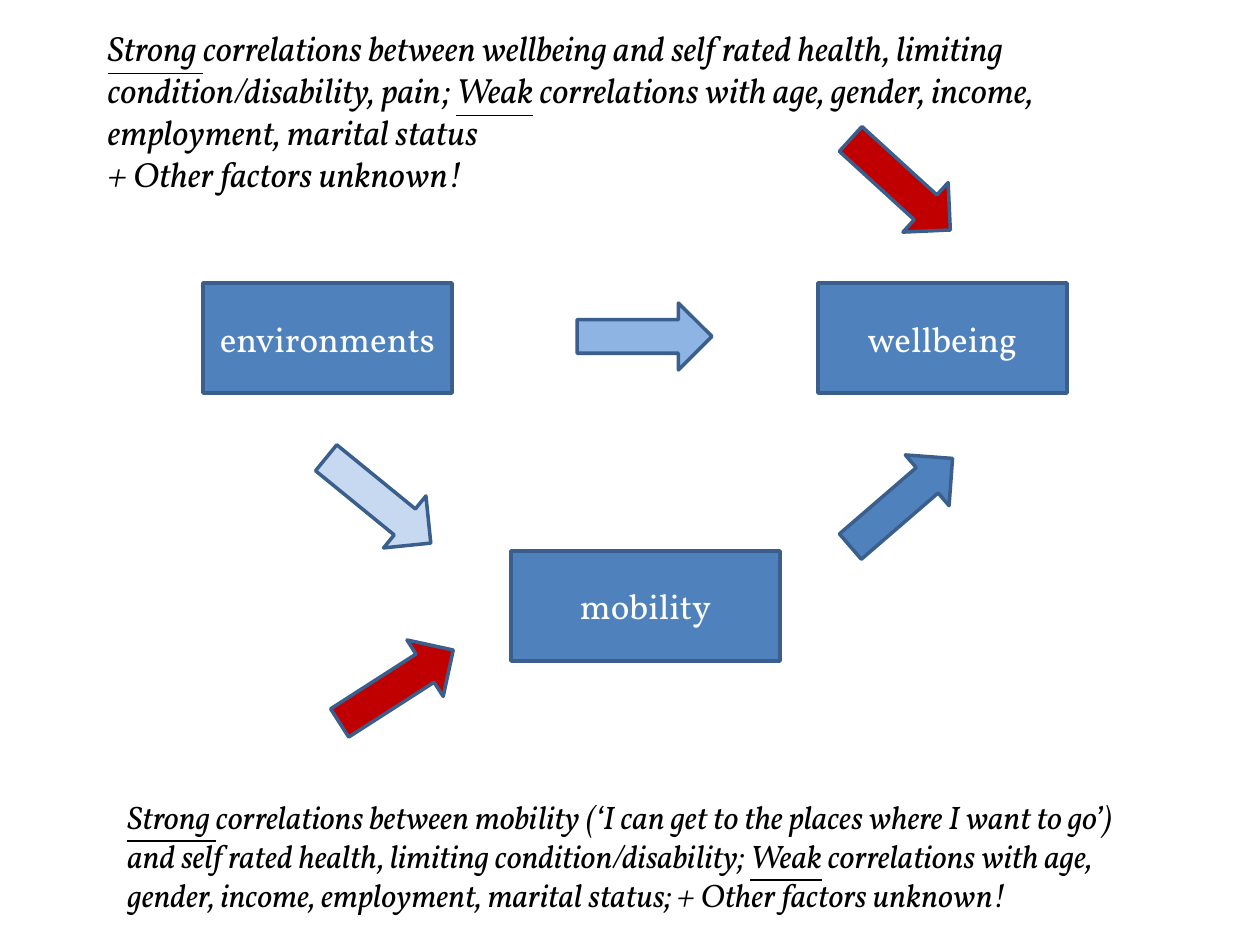
"""Build the slide on environments, mobility and wellbeing."""
from dataclasses import dataclass

import pptx
import pptx.dml.color
import pptx.enum.shapes
import pptx.enum.text
import pptx.util

SCALE = 914400 / 126
FONT = "Vollkorn"
EDGE = "3A5F8C"
BLUE = "4F81BD"
RED = "C00000"
KIND = pptx.enum.shapes.MSO_SHAPE
ALIGN = pptx.enum.text.PP_ALIGN
ANCHOR = pptx.enum.text.MSO_ANCHOR


@dataclass
class Box:
    """A labelled process box."""
    label: str
    left: int
    top: int
    width: int


@dataclass
class Arrow:
    """A block arrow turned by some degrees."""
    left: int
    top: int
    turn: float
    fill: str


@dataclass
class Span:
    """A stretch of note text."""
    text: str
    line: bool = False


BOXES = [
    Box("environments", 203, 283, 249),
    Box("wellbeing", 818, 283, 249),
    Box("mobility", 511, 551, 269),
]
ARROWS = [
    Arrow(577, 303, 0, "8EB4E3"),
    Arrow(311, 467, 39.2, "C6D9F1"),
    Arrow(834, 469, 319.2, BLUE),
    Arrow(833, 151, 42.4, RED),
    Arrow(329, 653, 327.3, RED),
]
UPPER = [
    Span("Strong ", True),
    Span("correlations between wellbeing and self rated health, "
         "limiting condition/disability, pain; "),
    Span("Weak", True),
    Span(" correlations with age, gender, income, employment, marital status "
         "\n+ Other factors unknown!"),
]
LOWER = [
    Span("Strong ", True),
    Span("correlations between mobility (‘I can get to the places where I want "
         "to go’) and self rated health, limiting condition/disability; "),
    Span("Weak", True),
    Span(" correlations with age, gender, income, employment, marital status; "
         "+ Other factors unknown!"),
]


def px(count: int) -> int:
    """Turn pixels into EMU."""
    return round(count * SCALE)


def tint(code: str) -> pptx.dml.color.RGBColor:
    """Turn a hex string into a colour."""
    return pptx.dml.color.RGBColor.from_string(code)


def put(item, **values) -> None:
    """Set attributes from format values."""
    for name, value in values.items():
        setattr(item, name, value)


def style(run, size: float, color: str, **values) -> None:
    """Format the font of a run."""
    put(run.font, name=FONT, size=pptx.util.Pt(size), **values)
    run.font.color.rgb = tint(color)


def paint(shape, fill: str) -> None:
    """Fill and outline a shape."""
    shape.shadow.inherit = False
    shape.fill.solid()
    shape.fill.fore_color.rgb = tint(fill)
    shape.line.color.rgb = tint(EDGE)
    shape.line.width = pptx.util.Pt(2)


def draw_box(slide, box: Box) -> None:
    """Draw a box with its label."""
    shape = slide.shapes.add_shape(KIND.FLOWCHART_PROCESS, px(box.left),
                                   px(box.top), px(box.width), px(110))
    paint(shape, BLUE)
    shape.text_frame.vertical_anchor = ANCHOR.MIDDLE
    para = shape.text_frame.paragraphs[0]
    para.alignment = ALIGN.CENTER
    run = para.add_run()
    run.text = box.label
    style(run, 20, "FFFFFF")


def draw_arrow(slide, arrow: Arrow) -> None:
    """Draw a turned arrow."""
    shape = slide.shapes.add_shape(KIND.RIGHT_ARROW, px(arrow.left),
                                   px(arrow.top), px(135), px(67))
    paint(shape, arrow.fill)
    shape.rotation = arrow.turn


def write_note(shape, spans: list[Span], size: float, pitch: float, anchor) -> None:
    """Write an italic note with underlined words."""
    put(shape.text_frame, word_wrap=True, vertical_anchor=anchor,
        auto_size=pptx.enum.text.MSO_AUTO_SIZE.NONE)
    para = shape.text_frame.paragraphs[0]
    put(para, alignment=ALIGN.LEFT, line_spacing=pptx.util.Pt(pitch))
    for span in spans:
        for row, text in enumerate(span.text.split("\n")):
            if row:
                para.add_line_break()
            run = para.add_run()
            run.text = text
            style(run, size, "000000", italic=True, underline=span.line)


def main() -> None:
    """Build and save the slide."""
    deck = pptx.Presentation()
    put(deck, slide_width=px(1260), slide_height=px(945))
    slide = deck.slides.add_slide(deck.slide_layouts[5])
    title = slide.shapes.title
    put(title, left=px(95), top=px(26), width=px(1071), height=px(169))
    write_note(title, UPPER, 20, 24, ANCHOR.MIDDLE)
    note = slide.shapes.add_textbox(px(115), px(791), px(1022), px(130))
    write_note(note, LOWER, 18.6, 22.3, ANCHOR.TOP)
    for box in BOXES:
        draw_box(slide, box)
    for arrow in ARROWS:
        draw_arrow(slide, arrow)
    deck.save("out.pptx")


if __name__ == "__main__":
    main()
